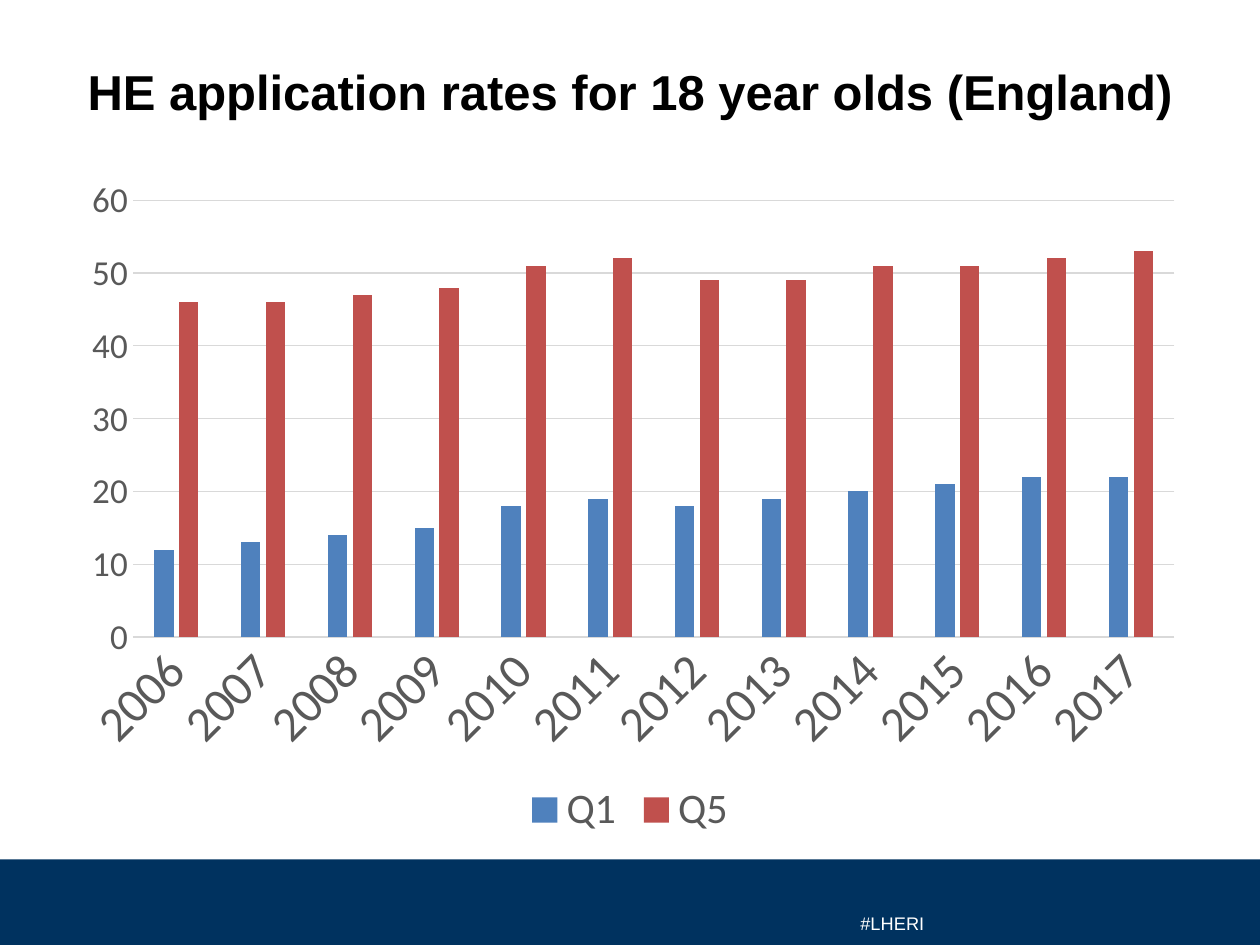
from pptx import Presentation
from pptx import util as u
from pptx.chart import data
from pptx.dml import color
from pptx.enum import chart as ch
from pptx.enum import shapes, text

Inches, Pt = u.Inches, u.Pt
YEARS = [str(year) for year in range(2006, 2018)]
RATES = {
    "Q1": ([12, 13, 14, 15, 18, 19, 18, 19, 20, 21, 22, 22], "4F81BD"),
    "Q5": ([46, 46, 47, 48, 51, 52, 49, 49, 51, 51, 52, 53], "C0504D"),
}
LABEL_GREY, LINE_GREY = "595959", "D9D9D9"


def rgb(value):
    return color.RGBColor.from_string(value)


def set_font(font, size, name, value, bold=False):
    font.size = Pt(size)
    font.name = name
    font.bold = bold
    font.color.rgb = rgb(value)


def set_line(line, value, width):
    line.color.rgb = rgb(value)
    line.width = Pt(width)


def place_title(slide, box):
    title = slide.shapes.title
    title.left, title.top, title.width, title.height = box
    frame = title.text_frame
    frame.text = "HE application rates for 18 year olds (England)"
    frame.vertical_anchor = text.MSO_ANCHOR.MIDDLE
    heading = frame.paragraphs[0]
    heading.alignment = text.PP_ALIGN.CENTER
    set_font(heading.font, 28, "Arial", "000000", bold=True)


def add_footer(slide, box):
    left, top, width, height = box
    band = slide.shapes.add_shape(shapes.MSO_SHAPE.RECTANGLE, *box)
    band.shadow.inherit = False
    band.fill.solid()
    band.fill.fore_color.rgb = rgb("00325F")
    band.line.fill.background()

    hashtag = slide.shapes.add_textbox(
        left + Inches(6.73), top + Inches(0.2), Inches(0.79), Inches(0.3))
    frame = hashtag.text_frame
    frame.word_wrap = True
    frame.auto_size = text.MSO_AUTO_SIZE.SHAPE_TO_FIT_TEXT
    tag = frame.paragraphs[0]
    run = tag.add_run()
    run.text = "#LHERI"
    set_font(tag.font, 18, "Arial", "FFFFFF")
    run._r.get_or_add_rPr().set("baseline", "-25000")


def add_rates_chart(slide, box):
    rates = data.CategoryChartData()
    rates.categories = YEARS
    for quintile, (values, _) in RATES.items():
        rates.add_series(quintile, values)
    chart = slide.shapes.add_chart(
        ch.XL_CHART_TYPE.COLUMN_CLUSTERED, *box, rates).chart
    chart.has_title = False
    set_font(chart.font, 10, "Calibri", "000000")

    plot = chart.plots[0]
    plot.gap_width = 219
    plot.overlap = -27
    plot.vary_by_categories = False
    for series, (_, fill) in zip(plot.series, RATES.values()):
        series.format.fill.solid()
        series.format.fill.fore_color.rgb = rgb(fill)

    years, percent = chart.category_axis, chart.value_axis
    for axis, size in ((years, 28), (percent, 20)):
        axis.major_tick_mark = axis.minor_tick_mark = ch.XL_TICK_MARK.NONE
        set_font(axis.tick_labels.font, size, "Calibri", LABEL_GREY)
    set_line(years.format.line, LINE_GREY, 0.75)
    years._element.txPr.bodyPr.set("rot", "-2700000")
    percent.minimum_scale, percent.maximum_scale = 0, 60
    percent.major_unit = 10
    percent.format.line.fill.background()
    set_line(percent.major_gridlines.format.line, LINE_GREY, 0.75)

    chart.has_legend = True
    chart.legend.position = ch.XL_LEGEND_POSITION.BOTTOM
    chart.legend.include_in_layout = False
    set_font(chart.legend.font, 24, "Calibri", LABEL_GREY)


def main():
    deck = Presentation()
    deck.slide_width, deck.slide_height = Inches(10), Inches(7.5)
    slide = deck.slides.add_slide(deck.slide_layouts[5])
    add_footer(slide, (Inches(0), Inches(6.82), Inches(10), Inches(0.68)))
    place_title(slide, (Inches(0.5), Inches(0.3), Inches(9), Inches(0.85)))
    add_rates_chart(slide, (Inches(0.5), Inches(1.31), Inches(9), Inches(5.39)))
    deck.save("out.pptx")


if __name__ == "__main__":
    main()
